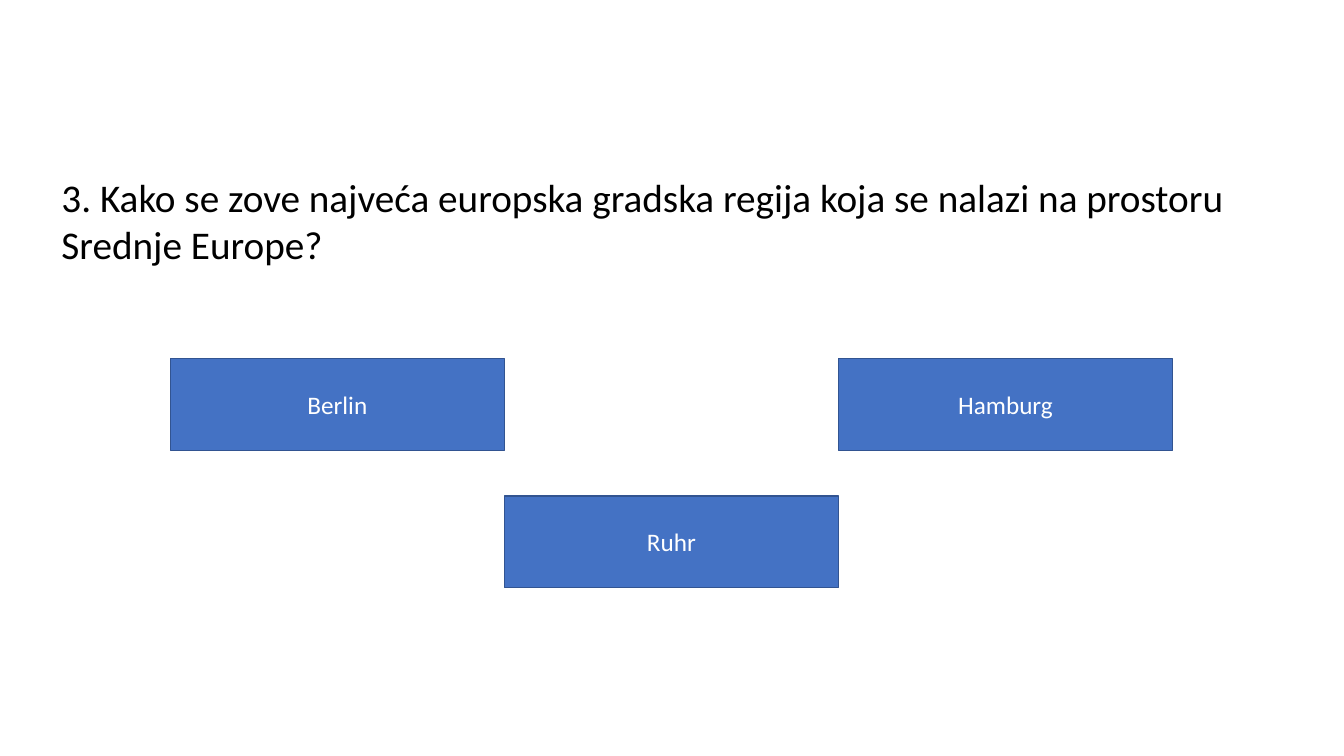
from pptx import Presentation
from pptx import util as u
from pptx.dml import color
from pptx.enum import shapes, text

ANSWERS = [("Berlin", 0, 0), ("Hamburg", 2, 0), ("Ruhr", 1, 1)]


def paint(target, value):
    """Set a colour format from a hex string."""
    target.rgb = color.RGBColor.from_string(value)


def write(box, words, size, shade, align, anchor):
    """Fill a shape with one formatted paragraph."""
    frame = box.text_frame
    frame.text = words
    frame.word_wrap = True
    frame.auto_size = text.MSO_AUTO_SIZE.NONE
    frame.vertical_anchor = anchor
    para = frame.paragraphs[0]
    para.alignment = align
    for span in para.runs:
        span.font.name = "Calibri"
        span.font.size = u.Pt(size)
        paint(span.font.color, shade)


def add_question(page, left, top, width, height):
    """Place the question in the title placeholder."""
    title = page.shapes.title
    title.left, title.top = u.Inches(left), u.Inches(top)
    title.width, title.height = u.Inches(width), u.Inches(height)
    write(title, "3. Kako se zove najveća europska gradska regija koja se nalazi "
          "na prostoru Srednje Europe?", 28, "000000",
          text.PP_ALIGN.LEFT, text.MSO_ANCHOR.TOP)


def add_answers(page, left, top, width, height):
    """Place the answers on a grid of three columns and two rows."""
    column = width / 3
    row = height * 0.4
    pitch = height - row
    for name, across, down in ANSWERS:
        box = page.shapes.add_shape(
            shapes.MSO_SHAPE.RECTANGLE,
            u.Inches(left + across * column), u.Inches(top + down * pitch),
            u.Inches(column), u.Inches(row))
        box.shadow.inherit = False
        box.fill.solid()
        paint(box.fill.fore_color, "4472C4")
        paint(box.line.color, "325491")
        box.line.width = u.Pt(1)
        write(box, name, 18, "FFFFFF",
              text.PP_ALIGN.CENTER, text.MSO_ANCHOR.MIDDLE)


def main():
    """Build the quiz slide and save it."""
    deck = Presentation()
    deck.slide_width, deck.slide_height = u.Inches(13.33), u.Inches(7.5)
    page = deck.slides.add_slide(deck.slide_layouts[5])
    add_question(page, 0.51, 1.67, 12.46, 1.04)
    add_answers(page, 1.69, 3.56, 9.94, 2.27)
    deck.save("out.pptx")


if __name__ == "__main__":
    main()
